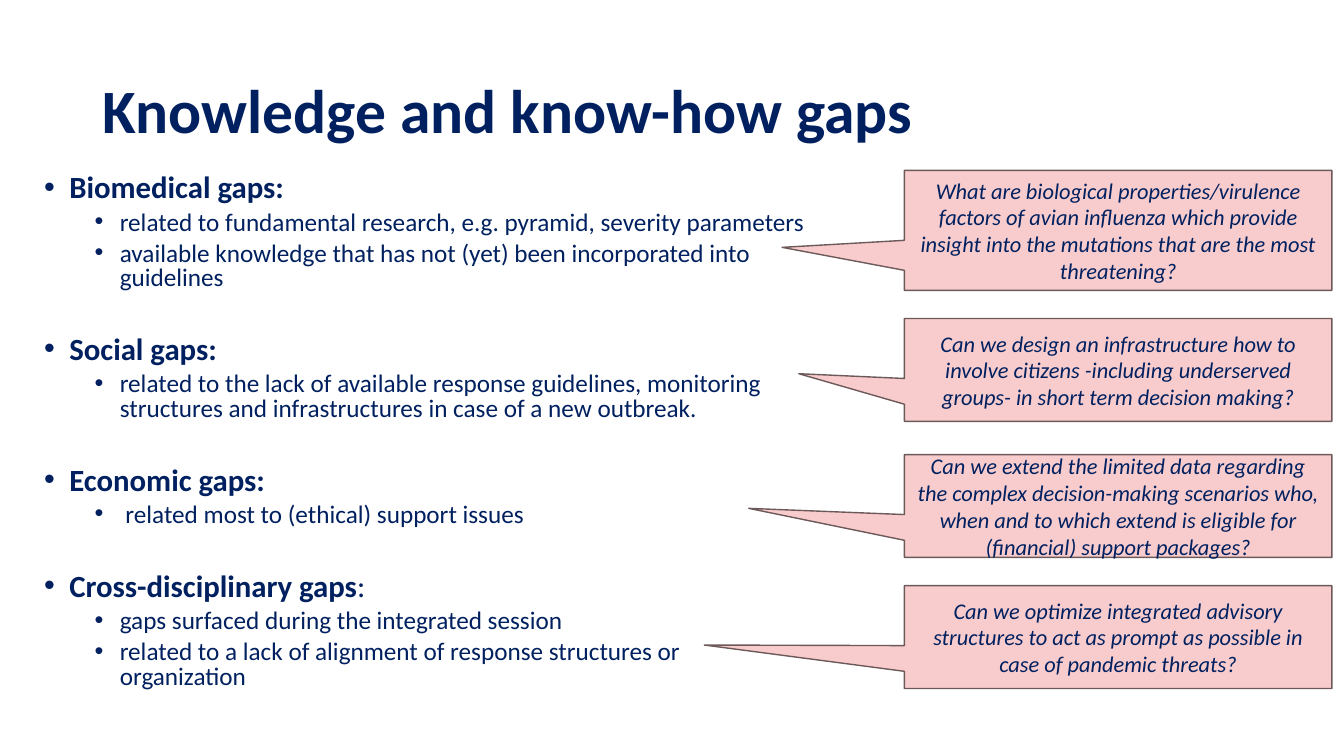
"""Build the slide on knowledge and know-how gaps with its question callouts."""
from dataclasses import dataclass

from lxml.etree import SubElement
from pptx import Presentation
from pptx.dml.color import RGBColor
from pptx.enum.shapes import MSO_SHAPE as Preset
from pptx.enum.text import MSO_ANCHOR as Anchor, PP_ALIGN as Align
from pptx.oxml.ns import qn
from pptx.util import Inches, Pt

TITLE = "Knowledge and know-how gaps"
GAPS = [
    ("Biomedical gaps", ":", [
        "related to fundamental research, e.g. pyramid, severity parameters",
        "available knowledge that has not (yet) been incorporated into guidelines",
    ]),
    ("Social gaps", ":", [
        "related to the lack of available response guidelines, monitoring "
        "structures and infrastructures in case of a new outbreak.",
    ]),
    ("Economic gaps", ":", [" related most to (ethical) support issues"]),
    ("Cross-disciplinary gaps", ":", [
        "gaps surfaced during the integrated session",
        "related to a lack of alignment of response structures or organization",
    ]),
]
LIGHT_COLON = "Cross-disciplinary gaps"
QUESTIONS = [
    ("What are biological properties/virulence factors of avian influenza which provide "
     "insight into the mutations that are the most threatening?", 1.69, 1.19, (-0.786, 0.142)),
    ("Can we design an infrastructure how to involve citizens -including underserved "
     "groups- in short term decision making?", 3.16, 1.02, (-0.747, 0.037)),
    ("Can we extend the limited data regarding the complex decision-making scenarios who, "
     "when and to which extend is eligible for (financial) support packages?",
     4.51, 1.02, (-0.864, 0.023)),
    ("Can we optimize integrated advisory structures to act as prompt as possible in case "
     "of pandemic threats?", 5.81, 1.02, (-0.968, 0.078)),
]
CALLOUT_LEFT, CALLOUT_WIDTH = 8.97, 4.24


@dataclass(frozen=True)
class Theme:
    font: str = "Calibri"
    ink: RGBColor = RGBColor(0x00, 0x20, 0x60)
    fill: RGBColor = RGBColor(0xF8, 0xCC, 0xCC)
    line: RGBColor = RGBColor(0x6D, 0x59, 0x59)
    title: int = 44
    heading: int = 22
    item: int = 18
    question: int = 16
    section_gap: float = 32.5
    item_gap: int = 5


THEME = Theme()


def format_run(run, size, bold=False, italic=False):
    font = run.font
    font.name, font.size, font.color.rgb = THEME.font, Pt(size), THEME.ink
    font.bold, font.italic = bold, italic


def add_bullet(paragraph, indent):
    properties = paragraph._p.get_or_add_pPr()
    properties.set("marL", str(Inches(indent)))
    properties.set("indent", str(Inches(-0.25)))
    SubElement(properties, qn("a:buFont"), typeface="Arial")
    SubElement(properties, qn("a:buChar"), char="•")
    paragraph.line_spacing = 0.8


def add_title(slide):
    title = slide.shapes.title
    title.left, title.top = Inches(0.92), Inches(0.4)
    title.width, title.height = Inches(9.73), Inches(1.45)
    title.text_frame.text = TITLE
    title.text_frame.vertical_anchor = Anchor.MIDDLE
    paragraph = title.text_frame.paragraphs[0]
    paragraph.alignment, paragraph.line_spacing = Align.LEFT, 0.9
    format_run(paragraph.runs[0], THEME.title, bold=True)


def add_gaps(slide):
    box = slide.shapes.add_textbox(Inches(0.34), Inches(1.69), Inches(7.8), Inches(5.41))
    frame = box.text_frame
    frame.word_wrap = True
    for index, (name, colon, items) in enumerate(GAPS):
        heading = frame.add_paragraph() if index else frame.paragraphs[0]
        add_bullet(heading, 0.25)
        if index:
            heading.space_before = Pt(THEME.section_gap)
        for text, bold in ((name, True), (colon, name != LIGHT_COLON)):
            run = heading.add_run()
            run.text = text
            format_run(run, THEME.heading, bold)
        for text in items:
            paragraph = frame.add_paragraph()
            paragraph.text, paragraph.level = text, 1
            add_bullet(paragraph, 0.75)
            paragraph.space_before = Pt(THEME.item_gap)
            format_run(paragraph.runs[0], THEME.item)


def add_callout(slide, question, top, height, tip):
    callout = slide.shapes.add_shape(
        Preset.RECTANGULAR_CALLOUT, Inches(CALLOUT_LEFT), Inches(top),
        Inches(CALLOUT_WIDTH), Inches(height))
    callout.adjustments[0], callout.adjustments[1] = tip
    callout.shadow.inherit = False
    callout.fill.solid()
    callout.fill.fore_color.rgb = THEME.fill
    callout.line.color.rgb, callout.line.width = THEME.line, Pt(1)
    frame = callout.text_frame
    frame.text, frame.word_wrap, frame.vertical_anchor = question, True, Anchor.MIDDLE
    paragraph = frame.paragraphs[0]
    paragraph.alignment = Align.CENTER
    format_run(paragraph.runs[0], THEME.question, italic=True)


def main():
    presentation = Presentation()
    presentation.slide_width, presentation.slide_height = Inches(13.33), Inches(7.5)
    slide = presentation.slides.add_slide(presentation.slide_layouts[5])
    add_title(slide)
    add_gaps(slide)
    for question in QUESTIONS:
        add_callout(slide, *question)
    presentation.save("out.pptx")


if __name__ == "__main__":
    main()
